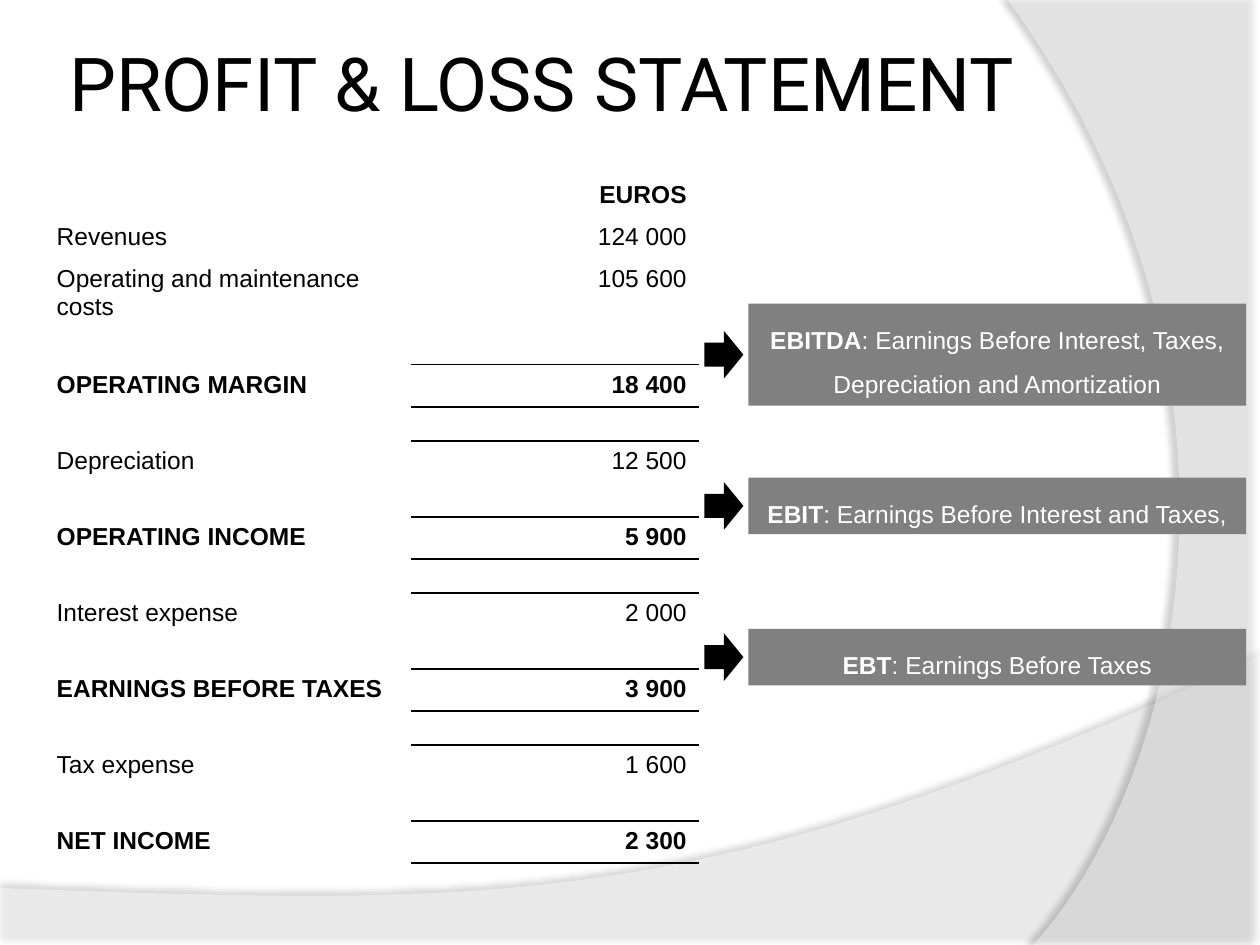
from lxml import etree
from pptx import Presentation
from pptx import util as u
from pptx.dml.color import RGBColor
from pptx.enum import shapes, text
from pptx.oxml import ns, parse_xml

COLORS = {"ink": "000000", "paper": "FFFFFF", "callout": "808080"}
A = f"xmlns:a=\"{ns.nsuri('a')}\""
WIDTH, HEIGHT = u.Inches(10), u.Inches(7.5)
COLUMN, ROW = WIDTH / 10, HEIGHT / 7.5
LINE_ROW, GAP_ROW, WRAPPED_ROW = 0.33, 0.27, 0.56

STATEMENT = [
    ("", "EUROS"),
    ("Revenues", "124 000"),
    ("Operating and maintenance costs", "105 600"),
    None,
    ("OPERATING MARGIN", "18 400"),
    None,
    ("Depreciation", "12 500"),
    None,
    ("OPERATING INCOME", "5 900"),
    None,
    ("Interest expense", "2 000"),
    None,
    ("EARNINGS BEFORE TAXES", "3 900"),
    None,
    ("Tax expense", "1 600"),
    None,
    ("NET INCOME", "2 300"),
]
CALLOUTS = [
    (2.41, 0.81, "EBITDA", ": Earnings Before Interest, Taxes, Depreciation and Amortization"),
    (3.79, 0.45, "EBIT", ": Earnings Before Interest and Taxes,"),
    (4.99, 0.45, "EBT", ": Earnings Before Taxes"),
]


def grid(left, top, width, height):
    return [int(n) for n in (left * COLUMN, top * ROW, width * COLUMN, height * ROW)]


def rgb(name):
    return RGBColor.from_string(COLORS[name])


def style(run, size, face="Arial", color="ink", bold=False):
    run.font.size, run.font.name, run.font.bold = u.Pt(size), face, bold
    run.font.color.rgb = rgb(color)


def paint(shape, color):
    shape.shadow.inherit = False
    shape.fill.solid()
    shape.fill.fore_color.rgb = rgb(color)
    shape.line.fill.background()


def bezier(start, first, second, end, steps=40):
    for step in range(1, steps + 1):
        t = step / steps
        weights = ((1 - t) ** 3, 3 * t * (1 - t) ** 2, 3 * t * t * (1 - t), t ** 3)
        yield tuple(sum(w * p[axis] for w, p in zip(weights, (start, first, second, end)))
                    for axis in (0, 1))


def add_wave(slide, box, corners, curve, opacity, shadow):
    left, top, width, height = box

    def place(point):
        return round(left + point[0] * width), round(top + point[1] * height)

    outline = [place(p) for p in [*corners, *bezier(corners[-1], *curve)]]
    builder = slide.shapes.build_freeform(*outline[0], scale=1.0)
    builder.add_line_segments(outline[1:], close=True)
    wave = builder.convert_to_shape()
    paint(wave, "paper")
    color = wave.fill._xPr.find(".//" + ns.qn("a:srgbClr"))
    etree.SubElement(color, ns.qn("a:alpha"), val=str(opacity * 1000))
    alpha, blur, distance, angle = shadow
    effects = wave.element.spPr.find(ns.qn("a:effectLst"))
    effects.append(parse_xml(
        f'<a:outerShdw {A} blurRad="{u.Pt(blur)}" dist="{u.Pt(distance)}" dir="{angle * 60000}" '
        f'algn="ctr" rotWithShape="0"><a:srgbClr val="{COLORS["ink"]}">'
        f'<a:alpha val="{alpha * 1000}"/></a:srgbClr></a:outerShdw>'))


def add_backdrop(slide):
    add_wave(slide, grid(0, 5.2, 10, 2.31), [(0, 0.8), (0, 1), (1, 1), (1, 0)],
             [(0.56, 0.9), (0.39, 0.86), (0, 0.8)], 45, (35, 4, 3.5, 270))
    add_wave(slide, grid(8, 0, 2, 7.5), [(1, 0), (1, 1), (0.1, 1)],
             [(0.68, 0.83), (1.09, 0.4), (0, 0)], 40, (45, 4, 4, 180))


def add_title(slide, box):
    frame = slide.shapes.add_textbox(*box).text_frame
    frame.word_wrap = True
    frame.vertical_anchor = text.MSO_ANCHOR.MIDDLE
    frame.margin_left = frame.margin_right = u.Inches(0.05)
    frame.text = "PROFIT & LOSS STATEMENT"
    style(frame.paragraphs[0].runs[0], 42.5, "Roboto")


def add_rule(cell, side):
    cell._tc.get_or_add_tcPr().append(parse_xml(
        f'<a:{side} {A} w="{u.Pt(1)}"><a:solidFill><a:srgbClr val="{COLORS["ink"]}"/>'
        f'</a:solidFill></a:{side}>'))


def add_statement(slide, box):
    frame = slide.shapes.add_table(len(STATEMENT), 2, *box)
    table = frame.table
    table.first_row = table.horz_banding = False
    style_id = table._tbl.tblPr.find(ns.qn("a:tableStyleId"))
    style_id.text = "{2D5ABB26-0587-4C30-8999-92F81FD0307C}"
    for column, share in zip(table.columns, (0.56, 0.44)):
        column.width = int(box[2] * share)
    totals = [i for i, entry in enumerate(STATEMENT) if entry and entry[0].isupper()]
    ruled_edges = {edge for i in totals for edge in (i, i + 1)}
    for i, entry in enumerate(STATEMENT):
        height = GAP_ROW if not entry else WRAPPED_ROW if len(entry[0]) > 28 else LINE_ROW
        table.rows[i].height = int(height * ROW)
        for j, words in enumerate(entry or ("", "")):
            cell = table.cell(i, j)
            if j:
                for side, edge in (("lnT", i), ("lnB", i + 1)):
                    if edge in ruled_edges:
                        add_rule(cell, side)
            cell.fill.background()
            paragraph = cell.text_frame.paragraphs[0]
            paragraph.alignment = text.PP_ALIGN.RIGHT if j else text.PP_ALIGN.LEFT
            if words:
                paragraph.text = words
                style(paragraph.runs[0], 14, bold=i == 0 or i in totals)
            else:
                etree.SubElement(paragraph._p, ns.qn("a:endParaRPr"), sz="1000")


def add_callout(slide, box, term, meaning):
    left, top, width, height = box
    arrow_width, arrow_height, indent = (int(n * COLUMN) for n in (0.31, 0.38, 0.35))
    panel = slide.shapes.add_shape(shapes.MSO_SHAPE.RECTANGLE,
                                   left + indent, top, width - indent, height)
    paint(panel, "callout")
    frame = panel.text_frame
    frame.word_wrap = True
    frame.auto_size = text.MSO_AUTO_SIZE.SHAPE_TO_FIT_TEXT
    frame.vertical_anchor = text.MSO_ANCHOR.MIDDLE
    paragraph = frame.paragraphs[0]
    paragraph.alignment = text.PP_ALIGN.CENTER
    paragraph.line_spacing = 1.5
    for words, bold in ((term, True), (meaning, False)):
        run = paragraph.add_run()
        run.text = words
        style(run, 14, color="paper", bold=bold)
    arrow = slide.shapes.add_shape(shapes.MSO_SHAPE.RIGHT_ARROW, left,
                                   top + (height - arrow_height) // 2, arrow_width, arrow_height)
    paint(arrow, "ink")


def main():
    deck = Presentation()
    deck.slide_width, deck.slide_height = WIDTH, HEIGHT
    slide = deck.slides.add_slide(deck.slide_layouts[6])
    add_backdrop(slide)
    add_title(slide, grid(0.5, 0.25, 9, 0.8))
    add_statement(slide, grid(0.35, 1.39, 5.2, 5.42))
    for top, height, term, meaning in CALLOUTS:
        add_callout(slide, grid(5.59, top, 4.3, height), term, meaning)
    deck.save("out.pptx")


if __name__ == "__main__":
    main()
